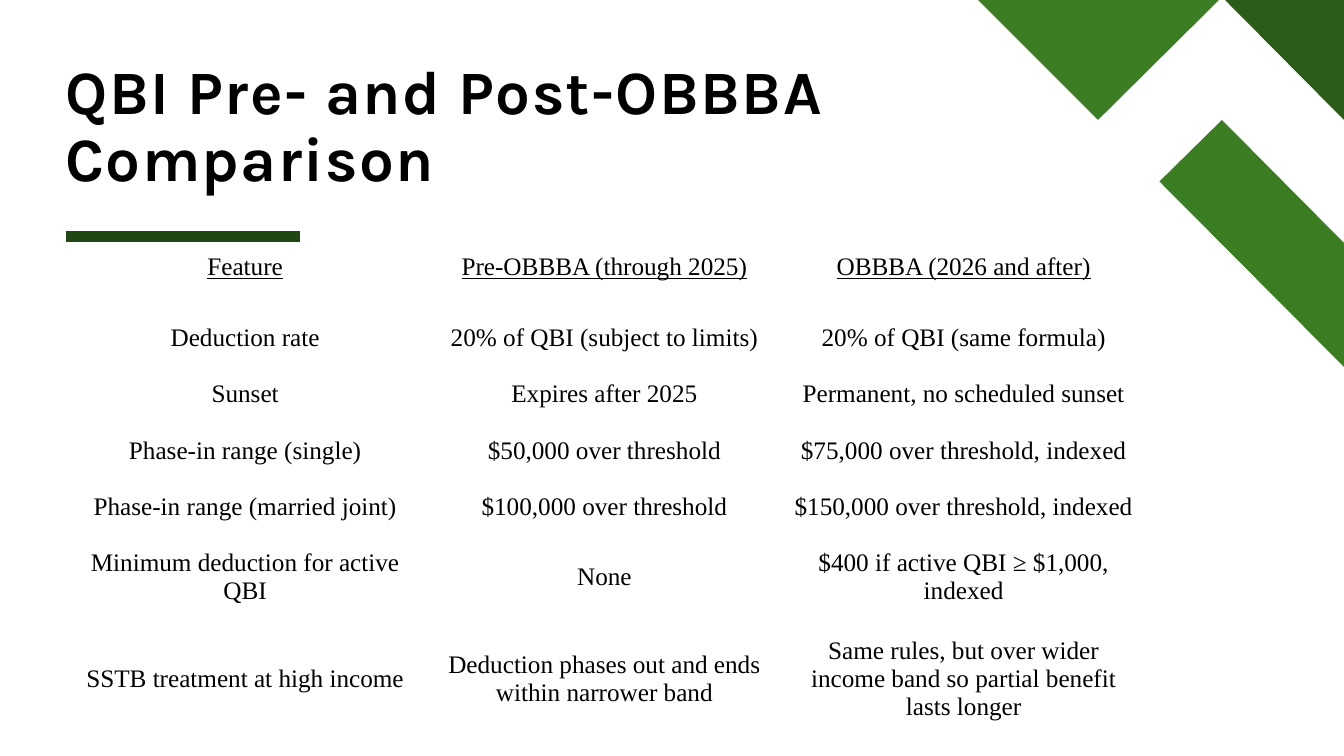
from pptx import Presentation
from pptx.dml.color import RGBColor
from pptx.enum.shapes import MSO_CONNECTOR
from pptx.enum.text import MSO_ANCHOR, MSO_AUTO_SIZE, PP_ALIGN
from pptx.util import Inches, Pt
from lxml import etree

LINE = MSO_CONNECTOR.STRAIGHT
TOP, MIDDLE, BOTTOM = MSO_ANCHOR.TOP, MSO_ANCHOR.MIDDLE, MSO_ANCHOR.BOTTOM
CENTER, LEFT = PP_ALIGN.CENTER, PP_ALIGN.LEFT
FIXED = MSO_AUTO_SIZE.NONE
DRAW = "{http://schemas.openxmlformats.org/drawingml/2006/main}"


def color(text):
    return RGBColor.from_string(text)


deck = Presentation()
deck.slide_width, deck.slide_height = Inches(13.33), Inches(7.5)
slide = deck.slides.add_slide(deck.slide_layouts[5])
shapes = slide.shapes

bands = [
    ("3A7D22", [(13.33, 3.64), (13.33, 2.41), (12.12, 1.19), (11.5, 1.8)]),
    ("2B5D19", [(13.33, 1.19), (13.33, 0), (12.15, 0)]),
    ("3A7D22", [(9.7, 0), (10.89, 1.19), (12.09, 0)]),
]
for fill, spots in bands:
    spots = [(Inches(x), Inches(y)) for x, y in spots]
    path = shapes.build_freeform(*spots[0])
    path.add_line_segments(spots[1:], close=True)
    band = path.convert_to_shape()
    band.shadow.inherit = False
    band.fill.solid()
    band.fill.fore_color.rgb = color(fill)
    band.line.fill.background()

rule = shapes.add_connector(LINE, Inches(0.65), Inches(2.35), Inches(2.98), Inches(2.35))
rule.line.color.rgb = color("204613")
rule.line.width = Pt(8)
etree.SubElement(rule.element.spPr, DRAW + "effectLst")

title = shapes.title
title.left, title.top = Inches(0.65), Inches(0.3)
title.width, title.height = Inches(10.69), Inches(1.63)
frame = title.text_frame
frame.text = "QBI Pre- and Post-OBBBA Comparison"
frame.word_wrap = True
frame.auto_size = FIXED
frame.vertical_anchor = BOTTOM
frame.margin_left = frame.margin_right = frame.margin_top = frame.margin_bottom = 0
para = frame.paragraphs[0]
para.alignment = LEFT
para.line_spacing = 0.9
para.font.name = "Karla"
para.font.size = Pt(44)
para.font.bold = True
para.font.color.rgb = color("000000")
para.runs[0].font._element.set("spc", "100")

rows = [
    ("Feature", "Pre‑OBBBA (through 2025)", "OBBBA (2026 and after)"),
    ("Deduction rate", "20% of QBI (subject to limits)", "20% of QBI (same formula)"),
    ("Sunset", "Expires after 2025", "Permanent, no scheduled sunset"),
    ("Phase‑in range (single)", "$50,000 over threshold", "$75,000 over threshold, indexed"),
    ("Phase‑in range (married joint)", "$100,000 over threshold", "$150,000 over threshold, indexed"),
    ("Minimum deduction for active QBI", "None", "$400 if active QBI ≥ $1,000, indexed"),
    ("SSTB treatment at high income", "Deduction phases out and ends within narrower band",
     "Same rules, but over wider income band so partial benefit lasts longer"),
]
tall = [0.61, 0.56, 0.56, 0.56, 0.56, 0.83, 1.2]
table = shapes.add_table(len(rows), 3, Inches(0.65), Inches(2.46),
                         Inches(10.69), Inches(sum(tall))).table
for col in table.columns:
    col.width = Inches(10.69 / 3)
for r, (row, high) in enumerate(zip(rows, tall)):
    head = r == 0
    table.rows[r].height = Inches(high)
    for c, text in enumerate(row):
        cell = table.cell(r, c)
        cell.text = text
        cell.fill.solid()
        cell.fill.fore_color.rgb = color("FFFFFF")
        cell.vertical_anchor = TOP if head else MIDDLE
        cell.margin_left = cell.margin_right = Inches(0.05)
        cell.margin_top = cell.margin_bottom = Inches(0.05 if head else 0.03)
        para = cell.text_frame.paragraphs[0]
        para.alignment = CENTER
        para.font.name = "Times New Roman"
        para.font.size = Pt(18)
        para.font.bold = False
        para.font.underline = head
        para.font.color.rgb = color("000000")

deck.save("out.pptx")
